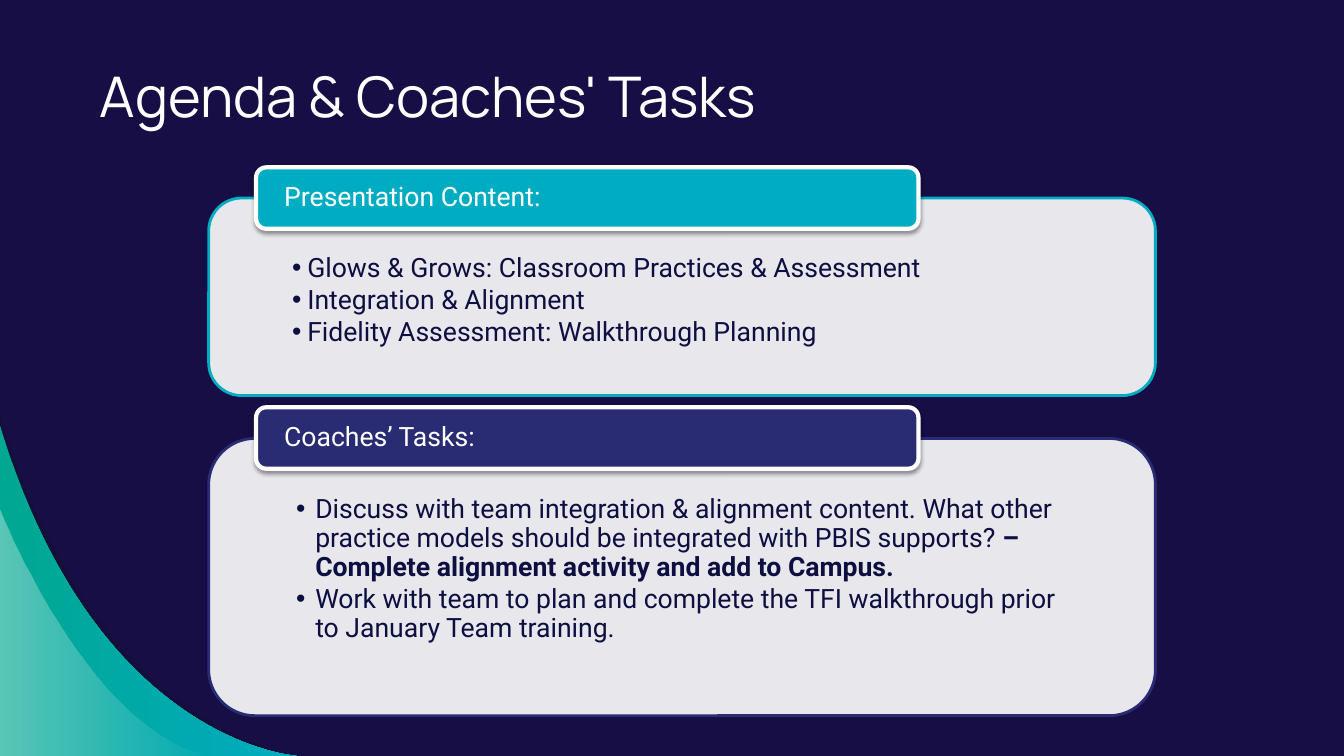
"""Build the agenda slide: a title, two labelled panels and a curved corner."""
import pptx
import pptx.util
import pptx.dml.color
import pptx.enum.shapes
import pptx.enum.text
import pptx.oxml
import lxml.etree

COLORS = {
    "night": "160E44", "shade": "12102F", "white": "FFFFFF", "ink": "0D0F41",
    "cyan": "00ACC2", "green": "00A791", "indigo": "292C73",
}
NAMESPACE = "http://schemas.openxmlformats.org/drawingml/2006/main"
TAG = "{" + NAMESPACE + "}"
SHADOW = (
    f'<a:effectLst xmlns:a="{NAMESPACE}"><a:outerShdw blurRad="39370" dist="20320" '
    'dir="5400000" rotWithShape="0"><a:srgbClr val="000000"><a:alpha val="38000"/>'
    '</a:srgbClr></a:outerShdw></a:effectLst>'
)

presentation = pptx.Presentation()
presentation.slide_width = pptx.util.Inches(13.33)
presentation.slide_height = pptx.util.Inches(7.5)
column = presentation.slide_width / 100
row = presentation.slide_height / 100
slide = presentation.slides.add_slide(presentation.slide_layouts[3])


def paint(color_format, name, opacity=100):
    """Set a named colour and, for a fill below 100 percent, its opacity."""
    color_format.rgb = pptx.dml.color.RGBColor.from_string(COLORS[name])
    if opacity < 100:
        color = color_format._xFill.find(TAG + "srgbClr")
        lxml.etree.SubElement(color, TAG + "alpha", val=str(opacity * 1000))


def style_text(paragraph, font_name, size, color):
    """Align a paragraph left and set its font."""
    paragraph.alignment = pptx.enum.text.PP_ALIGN.LEFT
    paragraph.font.name = font_name
    paragraph.font.size = pptx.util.Pt(size)
    paint(paragraph.font.color, color)


slide.background.fill.solid()
paint(slide.background.fill.fore_color, "night")

corner_curves = [
    ([(0, 55.07), (7.35, 98.53), (22.73, 100), (22.73, 100)], ["shade"], [54]),
    ([(0, 56.27), (7.13, 98.53), (22.13, 100), (22.13, 100)], ["green", "cyan"], [100, 100]),
    ([(0, 67.47), (0, 67.47), (6.83, 98), (16.2, 100)], ["white", "white"], [36, 0]),
]
for controls, fill_colors, opacities in corner_curves:
    points = [(int(x * column), int(y * row)) for x, y in controls]
    builder = slide.shapes.build_freeform(*points[0])
    builder.add_line_segments([points[3], (0, int(100 * row))], close=True)
    corner = builder.convert_to_shape()
    corner.shadow.inherit = False
    corner.line.fill.background()
    straight = next(corner.element.iter(TAG + "lnTo"))
    curve = lxml.etree.Element(TAG + "cubicBezTo")
    for x, y in points[1:]:
        lxml.etree.SubElement(curve, TAG + "pt", x=str(x), y=str(y - points[0][1]))
    straight.getparent().replace(straight, curve)
    if len(fill_colors) == 1:
        corner.fill.solid()
        paint(corner.fill.fore_color, fill_colors[0])
    else:
        corner.fill.gradient()
        corner.fill.gradient_angle = 0
        for stop, name in zip(corner.fill.gradient_stops, fill_colors):
            paint(stop.color, name)
    for color, opacity in zip(corner.element.spPr.iter(TAG + "srgbClr"), opacities):
        lxml.etree.SubElement(color, TAG + "alpha", val=str(opacity * 1000))

title = slide.shapes.title
title.left, title.top = int(6.68 * column), int(6.8 * row)
title.width, title.height = int(76.97 * column), int(12.27 * row)
title_frame = title.text_frame
title_frame.text = "Agenda & Coaches' Tasks"
title_frame.vertical_anchor = pptx.enum.text.MSO_ANCHOR.MIDDLE
title_frame.auto_size = pptx.enum.text.MSO_AUTO_SIZE.NONE
title_frame.margin_left = title_frame.margin_right = pptx.util.Inches(0.1)
title_frame.margin_top, title_frame.margin_bottom = pptx.util.Inches(0.05), pptx.util.Inches(0.11)
style_text(title_frame.paragraphs[0], "Manrope", 40, "white")

sections = [
    {"label": "Presentation Content:", "color": "cyan",
     "tab_top": 22.13, "top": 26.2, "height": 26.13,
     "indent": 0.15, "line_spacing": 1.0, "space_after": 0,
     "items": [["Glows & Grows: Classroom Practices & Assessment"],
               ["Integration & Alignment"],
               ["Fidelity Assessment: Walkthrough Planning"]]},
    {"label": "Coaches’ Tasks:", "color": "indigo",
     "tab_top": 53.87, "top": 58, "height": 36.67,
     "indent": 0.19, "line_spacing": 0.9, "space_after": 2.85,
     "items": [["Discuss with team integration & alignment content. What other practice "
                "models should be integrated with PBIS supports? ",
                "– Complete alignment activity and add to Campus."],
               ["Work with team to plan and complete the TFI walkthrough prior "
                "to January Team training."]]},
]
rounded = pptx.enum.shapes.MSO_SHAPE.ROUNDED_RECTANGLE
for section, body in zip(sections, list(slide.placeholders)[1:]):
    left, top = int(15.53 * column), int(section["top"] * row)
    width, height = int(70.44 * column), int(section["height"] * row)
    panel = slide.shapes.add_shape(rounded, left, top, width, height)
    tab = slide.shapes.add_shape(
        rounded, int(19.05 * column), int(section["tab_top"] * row),
        int(49.29 * column), int(8.13 * row))
    for shape, fill, opacity, line, weight in [
            (panel, "white", 90, section["color"], 2),
            (tab, section["color"], 100, "white", 3)]:
        shape.fill.solid()
        paint(shape.fill.fore_color, fill, opacity)
        paint(shape.line.color, line)
        shape.line.width = pptx.util.Pt(weight)
    panel.shadow.inherit = False
    tab.element.spPr.append(pptx.oxml.parse_xml(SHADOW))

    tab.text_frame.text = section["label"]
    tab.text_frame.vertical_anchor = pptx.enum.text.MSO_ANCHOR.MIDDLE
    tab.text_frame.margin_left = pptx.util.Inches(0.25)
    tab.text_frame.margin_top = tab.text_frame.margin_bottom = 0
    label = tab.text_frame.paragraphs[0]
    label.line_spacing = 0.9
    style_text(label, "Roboto", 19, "white")

    inset = int(height * 0.05)
    body.left, body.top = left + inset, top + inset
    body.width, body.height = width - 2 * inset, height - 2 * inset
    panel.element.addnext(body.element)
    frame = body.text_frame
    frame.auto_size = pptx.enum.text.MSO_AUTO_SIZE.NONE
    frame.margin_left = frame.margin_right = pptx.util.Inches(0.73)
    frame.margin_top, frame.margin_bottom = pptx.util.Inches(0.43), pptx.util.Inches(0.15)
    for index, parts in enumerate(section["items"]):
        paragraph = frame.add_paragraph() if index else frame.paragraphs[0]
        for part_index, part in enumerate(parts):
            run = paragraph.add_run()
            run.text = part
            if part_index:
                run.font.bold = True
        paragraph.line_spacing = section["line_spacing"]
        paragraph.space_before = pptx.util.Pt(0)
        paragraph.space_after = pptx.util.Pt(section["space_after"])
        style_text(paragraph, "Roboto", 19, "ink")
        indent = pptx.util.Inches(section["indent"])
        properties = paragraph._p.get_or_add_pPr()
        properties.set("marL", str(indent))
        properties.set("indent", str(-indent))

presentation.save("out.pptx")
